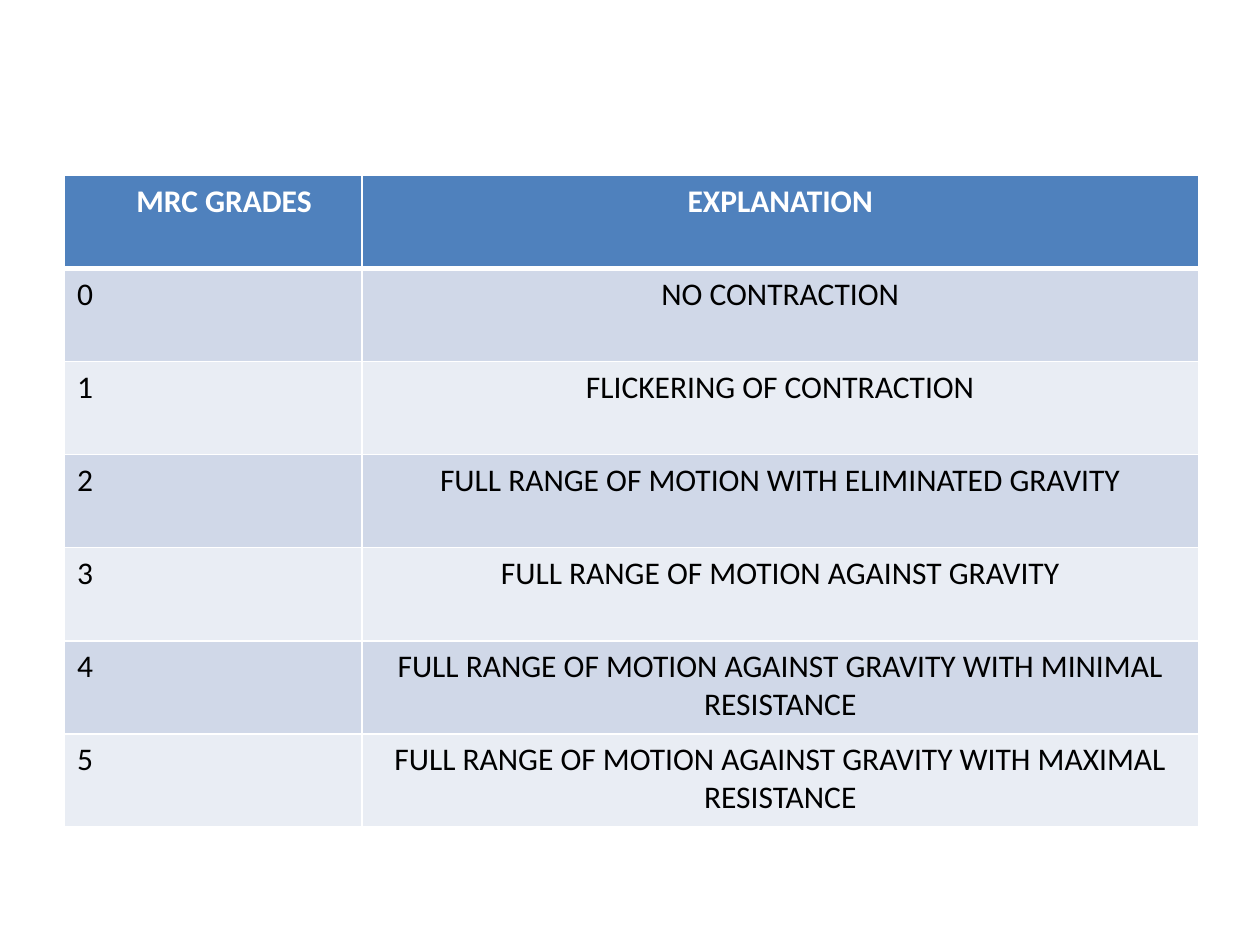
import pptx
import pptx.util
import pptx.dml.color
import pptx.enum.text
import pptx.oxml
import pptx.oxml.ns

Pt = pptx.util.Pt
CENTER = pptx.enum.text.PP_ALIGN.CENTER


def color(code):
    return pptx.dml.color.RGBColor.from_string(code)


def edge(cell, side, width):
    cell._tc.get_or_add_tcPr().append(pptx.oxml.parse_xml(
        f'<a:ln{side} {pptx.oxml.ns.nsdecls("a")} w="{Pt(width)}"><a:solidFill>'
        f'<a:srgbClr val="FFFFFF"/></a:solidFill></a:ln{side}>'))


rows = [
    ("MRC GRADES", "EXPLANATION"),
    ("0", "NO CONTRACTION"),
    ("1", "FLICKERING OF CONTRACTION"),
    ("2", "FULL RANGE OF MOTION WITH ELIMINATED GRAVITY"),
    ("3", "FULL RANGE OF MOTION AGAINST GRAVITY"),
    ("4", "FULL RANGE OF MOTION AGAINST GRAVITY WITH MINIMAL RESISTANCE"),
    ("5", "FULL RANGE OF MOTION AGAINST GRAVITY WITH MAXIMAL RESISTANCE"),
]

# Slide
deck = pptx.Presentation()
deck.slide_width, deck.slide_height = Pt(720), Pt(540)
slide = deck.slides.add_slide(deck.slide_layouts[6])

# Table of grades
high = 53.15
grid = slide.shapes.add_table(len(rows), 2, Pt(36.9), Pt(100.4),
                              Pt(648), Pt(high * len(rows))).table
grid.columns[0].width = Pt(170)
grid.columns[1].width = Pt(478)

for r, row in enumerate(rows):
    grid.rows[r].height = Pt(high)
    head = r == 0
    fill = "4F81BD" if head else ("E9EDF4", "D0D8E8")[r % 2]
    for c, words in enumerate(row):
        cell = grid.cell(r, c)

        # White borders, thicker under the header
        for side in "LRTB":
            thick = (r, side) in ((0, "B"), (1, "T"))
            edge(cell, side, 3 if thick else 1)
        cell.fill.solid()
        cell.fill.fore_color.rgb = color(fill)

        # Text
        cell.text_frame.text = words
        para = cell.text_frame.paragraphs[0]
        if head or c == 1:
            para.alignment = CENTER
        font = para.runs[0].font
        font.name = "Calibri"
        font.size = Pt(18)
        font.bold = head
        font.color.rgb = color("FFFFFF" if head else "000000")

# The first heading sits a little right of the middle
grid.cell(0, 0).margin_left = Pt(19.4)

deck.save("out.pptx")
